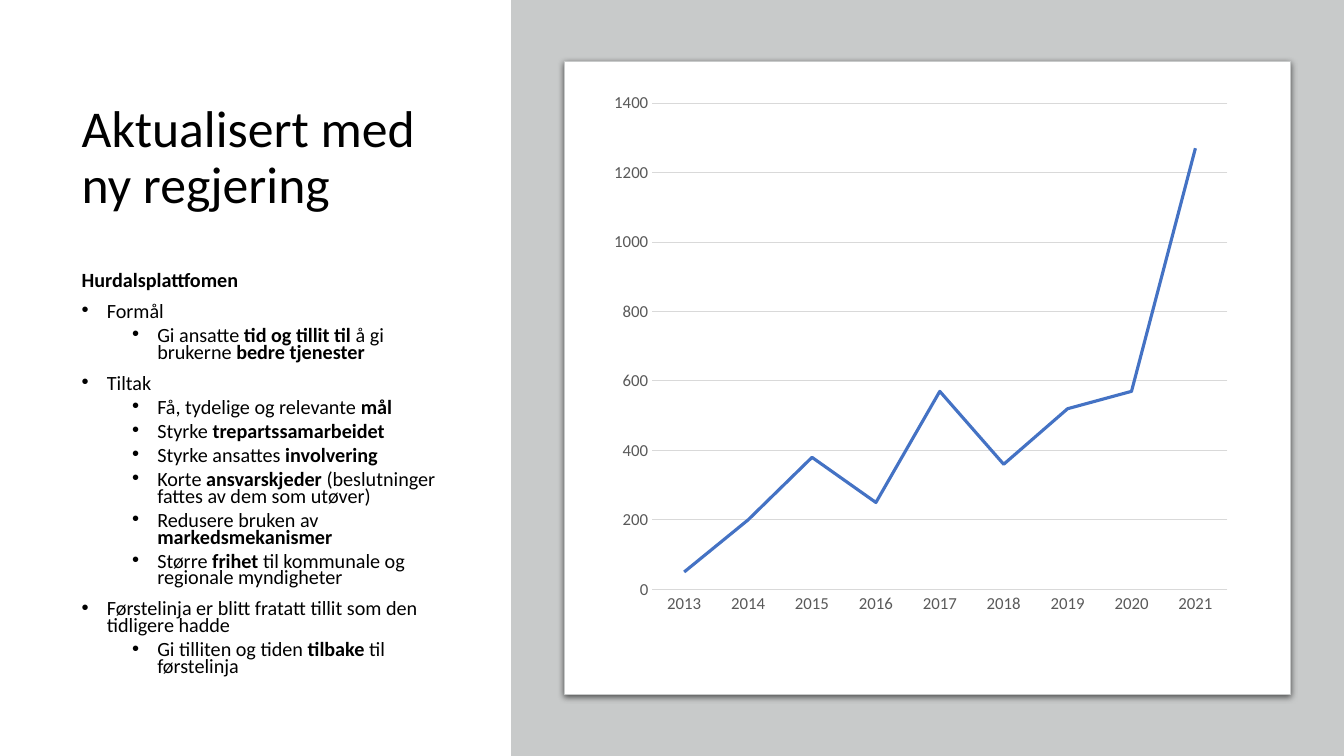
from lxml.etree import SubElement
from pptx import Presentation
from pptx.chart.data import CategoryChartData
from pptx.dml.color import RGBColor
from pptx.enum.chart import XL_CHART_TYPE as ChartType, XL_TICK_MARK as TickMark
from pptx.enum.shapes import MSO_SHAPE as Preset
from pptx.enum.text import MSO_ANCHOR as Anchor, MSO_AUTO_SIZE as AutoSize, PP_ALIGN as Align
from pptx.oxml import parse_xml
from pptx.oxml.ns import nsdecls, qn
from pptx.util import Inches, Pt

BLACK = RGBColor(0x00, 0x00, 0x00)
WHITE = RGBColor(0xFF, 0xFF, 0xFF)
PANEL_GREY = RGBColor(0xC8, 0xCA, 0xCA)
GRID_GREY = RGBColor(0xD9, 0xD9, 0xD9)
LABEL_GREY = RGBColor(0x59, 0x59, 0x59)
LINE_BLUE = RGBColor(0x44, 0x72, 0xC4)
FONT = "Calibri"


def set_font(font, size, color, bold=False):
    font.color.rgb = color
    for name, value in {"name": FONT, "size": Pt(size), "bold": bold}.items():
        setattr(font, name, value)


def place(shape, left, top, width, height):
    for name, value in {"left": left, "top": top, "width": width, "height": height}.items():
        setattr(shape, name, Inches(value))


deck = Presentation()
deck.slide_width, deck.slide_height = Inches(13.33), Inches(7.5)
page = deck.slides.add_slide(deck.slide_layouts[1])

title = page.shapes.title
place(title, 0.71, 0.69, 3.83, 1.77)
body = page.placeholders[1]
place(body, 0.71, 2.67, 3.83, 4.14)
for holder, anchor in ((title, Anchor.MIDDLE), (body, Anchor.TOP)):
    frame_format = {"auto_size": AutoSize.NONE, "word_wrap": True, "vertical_anchor": anchor}
    for name, value in frame_format.items():
        setattr(holder.text_frame, name, value)

title.text_frame.text = "Aktualisert med ny regjering"
para = title.text_frame.paragraphs[0]
para.alignment, para.line_spacing = Align.LEFT, 0.9
set_font(para.runs[0].font, 36.9, BLACK)

HEADING, POINT, DETAIL = range(3)
# level, space before, left margin, indent
STYLES = {HEADING: (0, 10, 0, 0), POINT: (0, 10, 0.25, -0.25), DETAIL: (1, 5, 0.75, -0.25)}
LINES = [
    (HEADING, "*Hurdalsplattfomen"),
    (POINT, "Formål"),
    (DETAIL, "Gi ansatte *tid og tillit til *å gi brukerne *bedre tjenester"),
    (POINT, "Tiltak"),
    (DETAIL, "Få, tydelige og relevante *mål"),
    (DETAIL, "Styrke *trepartssamarbeidet"),
    (DETAIL, "Styrke ansattes *involvering"),
    (DETAIL, "Korte *ansvarskjeder* (beslutninger fattes av dem som utøver)"),
    (DETAIL, "Redusere bruken av *markedsmekanismer"),
    (DETAIL, "Større *frihet *til kommunale og regionale myndigheter"),
    (POINT, "Førstelinja er blitt fratatt tillit som den tidligere hadde"),
    (DETAIL, "Gi tilliten og tiden *tilbake *til førstelinja"),
]
for index, (kind, text) in enumerate(LINES):
    para = body.text_frame.add_paragraph() if index else body.text_frame.paragraphs[0]
    level, before, margin, indent = STYLES[kind]
    para_format = {"level": level, "line_spacing": 0.7, "space_before": Pt(before),
                   "alignment": Align.LEFT}
    for name, value in para_format.items():
        setattr(para, name, value)
    properties = para._p.get_or_add_pPr()
    properties.set("marL", str(Inches(margin)))
    properties.set("indent", str(Inches(indent)))
    if kind == HEADING:
        SubElement(properties, qn("a:buNone"))
    else:
        SubElement(properties, qn("a:buFont"), typeface="Arial")
        SubElement(properties, qn("a:buChar"), char="•")
    for part, words in enumerate(text.split("*")):
        if words:
            span = para.add_run()
            span.text = words
            set_font(span.font, 14.4, BLACK, bold=part % 2 == 1)

panel = page.shapes.add_shape(
    Preset.RECTANGLE, Inches(5.07), Inches(0), Inches(8.26), Inches(7.5))
card = page.shapes.add_shape(
    Preset.ROUNDED_RECTANGLE, Inches(5.6), Inches(0.61), Inches(7.2), Inches(6.28))
card.adjustments[0] = 0
for shape, color in ((panel, PANEL_GREY), (card, WHITE)):
    shape.shadow.inherit = False
    shape.fill.solid()
    shape.fill.fore_color.rgb = color
panel.line.fill.background()
card.line.color.rgb = PANEL_GREY
card.line.width = Pt(0.75)
effects = card._element.spPr.find(qn("a:effectLst"))
effects.append(parse_xml(
    f'<a:outerShdw {nsdecls("a")} blurRad="{Pt(4.5)}" dist="{Pt(1.5)}" dir="5400000" '
    f'algn="t" rotWithShape="0"><a:srgbClr val="{BLACK}"><a:alpha val="63000"/>'
    '</a:srgbClr></a:outerShdw>'))

data = CategoryChartData()
data.categories = [str(year) for year in range(2013, 2022)]
data.add_series("Series 1", (50, 200, 380, 250, 570, 360, 520, 570, 1270))
chart = page.shapes.add_chart(
    ChartType.LINE, Inches(5.91), Inches(0.88), Inches(6.58), Inches(5.73), data).chart
chart.has_legend = False
chart.has_title = False
set_font(chart.font, 12, BLACK)
chart.plots[0].vary_by_categories = False

series = chart.plots[0].series[0]
series.smooth = False
series.format.line.color.rgb = LINE_BLUE
series.format.line.width = Pt(2.25)

years, counts = chart.category_axis, chart.value_axis
for axis in (years, counts):
    axis.major_tick_mark = axis.minor_tick_mark = TickMark.NONE
    set_font(axis.tick_labels.font, 12, LABEL_GREY)
years.has_major_gridlines = False
counts.has_major_gridlines = True
counts.minimum_scale, counts.maximum_scale, counts.major_unit = 0, 1400, 200
counts.format.line.fill.background()
for line in (years.format.line, counts.major_gridlines.format.line):
    line.color.rgb = GRID_GREY
    line.width = Pt(0.75)

plot_area = chart._chartSpace.chart.plotArea
for old_layout in plot_area.findall(qn("c:layout")):
    plot_area.remove(old_layout)
layout = parse_xml(f'<c:layout {nsdecls("c")}><c:manualLayout/></c:layout>')
LAYOUT = {"layoutTarget": "inner", "xMode": "edge", "yMode": "edge",
          "x": 0.085, "y": 0.025, "w": 0.867, "h": 0.842}
for name, value in LAYOUT.items():
    SubElement(layout[0], qn(f"c:{name}"), val=str(value))
plot_area.insert(0, layout)

deck.save("out.pptx")
